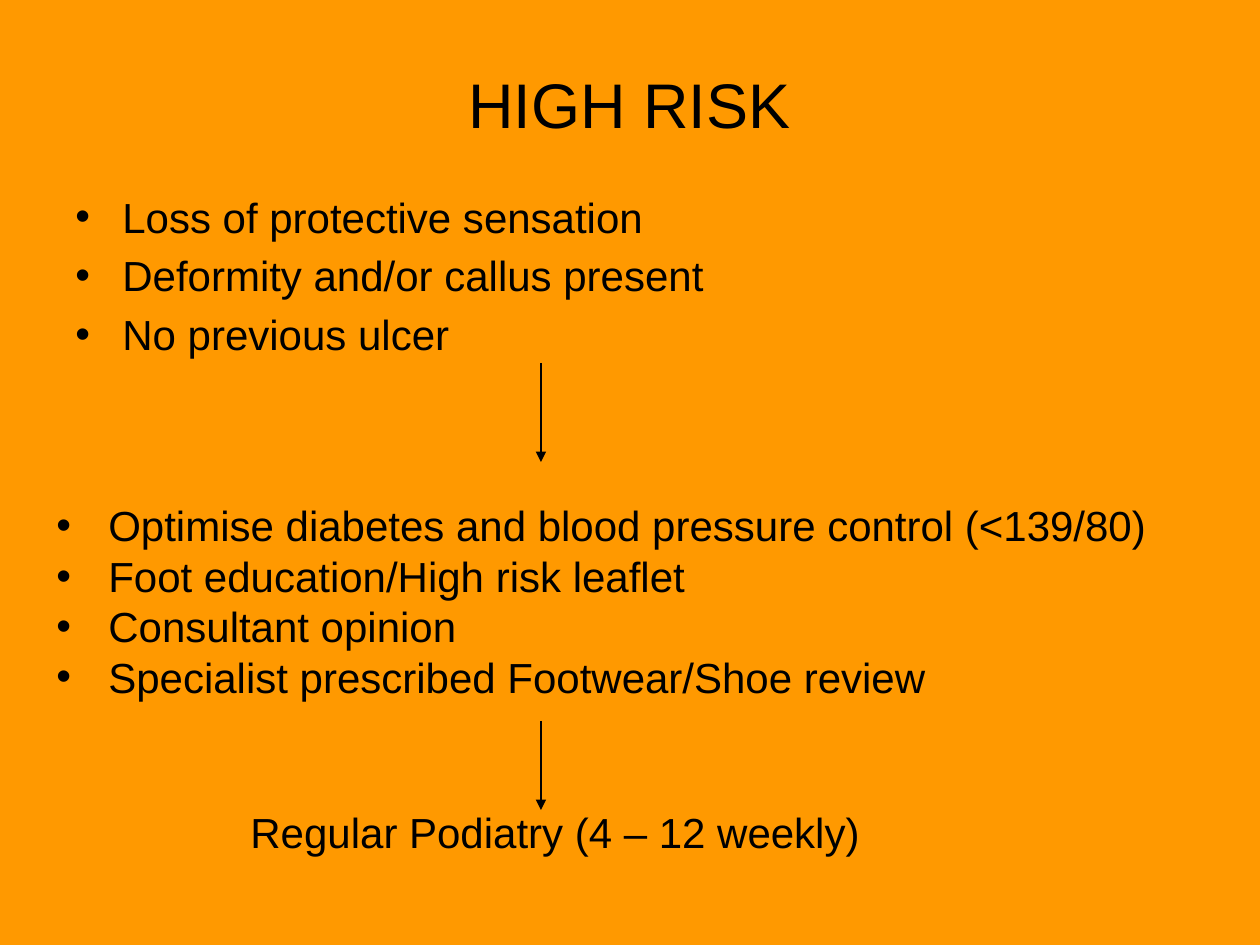
import pptx
import pptx.dml.color
import pptx.enum.shapes
import pptx.enum.text
import pptx.oxml.ns
import pptx.util
from lxml import etree

SCALE = 914400 / 126
COLORS = {"back": "FF9900", "ink": "000000"}
ALIGN = pptx.enum.text.PP_ALIGN
ANCHOR = pptx.enum.text.MSO_ANCHOR
QN = pptx.oxml.ns.qn

SIGNS = [
    "Loss of protective sensation",
    "Deformity and/or callus present",
    "No previous ulcer",
]
STEPS = [
    "Optimise diabetes and blood pressure control (<139/80)",
    "Foot education/High risk leaflet",
    "Consultant opinion",
    "Specialist prescribed Footwear/Shoe review",
]
LIST = {"alignment": ALIGN.LEFT, "line_spacing": pptx.util.Pt(28.8)}
SPACED = {**LIST, "space_before": pptx.util.Pt(4.8)}
CENTER = {"alignment": ALIGN.CENTER}
AXIS = 541


def px(num):
    return pptx.util.Emu(round(num * SCALE))


def color(name):
    return pptx.dml.color.RGBColor.from_string(COLORS[name])


def apply(item, values):
    for name, value in values.items():
        setattr(item, name, value)


def place(shape, box):
    apply(shape, dict(zip(("left", "top", "width", "height"), map(px, box))))


def write(frame, lines, size, form):
    """Fill the frame with one formatted paragraph per line."""
    frame.word_wrap = True
    for i, line in enumerate(lines):
        para = frame.add_paragraph() if i else frame.paragraphs[0]
        apply(para, form)
        run = para.add_run()
        run.text = line
        apply(run.font, {"name": "Arial", "size": pptx.util.Pt(size)})
        run.font.color.rgb = color("ink")


def add_title(slide, text, box):
    title = slide.shapes.title
    place(title, box)
    title.text_frame.vertical_anchor = ANCHOR.MIDDLE
    write(title.text_frame, [text], 36, CENTER)


def add_text(slide, lines, box, form):
    frame = slide.shapes.add_textbox(*map(px, box)).text_frame
    write(frame, lines, 24, form)
    return frame


def add_list(slide, lines, box, form, indent):
    frame = add_text(slide, lines, box, form)
    for para in frame.paragraphs:
        props = para._p.get_or_add_pPr()
        props.set("marL", str(px(indent)))
        props.set("indent", str(-px(indent)))
        etree.SubElement(props, QN("a:buFont"), typeface="Arial")
        etree.SubElement(props, QN("a:buChar"), char="•")
    return frame


def add_arrow(slide, top, end):
    kind = pptx.enum.shapes.MSO_CONNECTOR.STRAIGHT
    arrow = slide.shapes.add_connector(kind, *map(px, (AXIS, top, AXIS, end)))
    arrow.line.width = pptx.util.Pt(0.75)
    arrow.line.color.rgb = color("ink")
    etree.SubElement(arrow.line._get_or_add_ln(), QN("a:tailEnd"), type="triangle")
    etree.SubElement(arrow._element.spPr, QN("a:effectLst"))


def main():
    deck = pptx.Presentation()
    apply(deck, {"slide_width": px(1260), "slide_height": px(945)})
    slide = deck.slides.add_slide(deck.slide_layouts[5])
    fill = slide.background.fill
    fill.solid()
    fill.fore_color.rgb = color("back")

    add_title(slide, "HIGH RISK", (94, 45, 1071, 117))
    add_list(slide, SIGNS, (63, 185, 1134, 659), SPACED, 47)
    add_arrow(slide, 363, 462)
    steps = add_list(slide, STEPS, (44, 442, 1131, 391), LIST, 52)
    steps.margin_top = px(58)
    add_arrow(slide, 721, 810)
    add_text(slide, ["Regular Podiatry (4 – 12 weekly)"], (193, 800, 724, 63), CENTER)
    deck.save("out.pptx")


if __name__ == "__main__":
    main()
